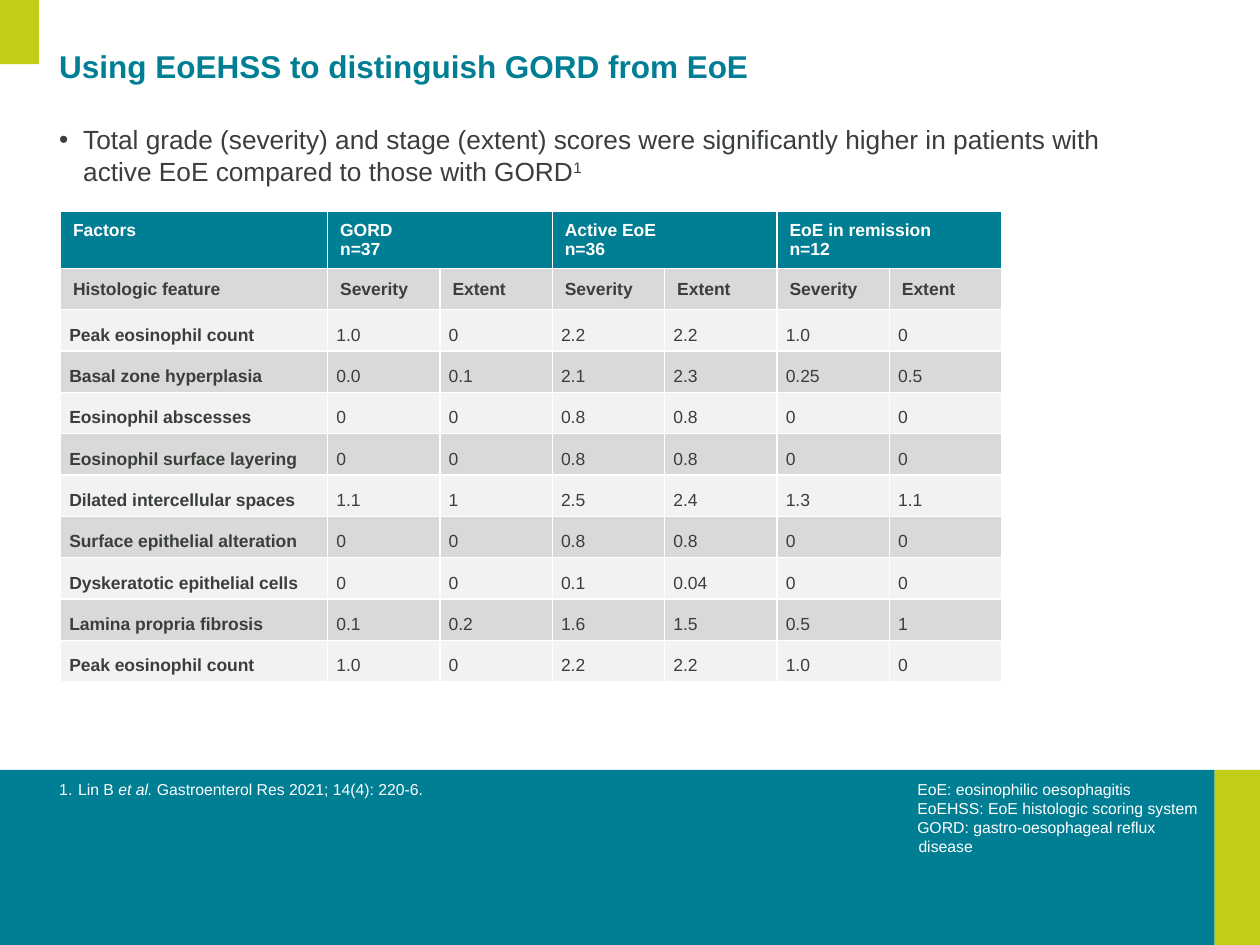
from dataclasses import dataclass

from lxml import etree
from pptx import Presentation
from pptx import util as u
from pptx.dml.color import RGBColor
from pptx.enum import shapes, text
from pptx.oxml.ns import qn

WIDTH, HEIGHT = u.Inches(10), u.Inches(7.5)
COLS, ROWS = 100, 75


@dataclass(frozen=True)
class Theme:
    font: str = "Arial"
    teal: str = "007E93"
    lime: str = "C0CF15"
    ink: str = "3A3F3A"
    white: str = "FFFFFF"
    band: str = "D9D9D9"
    pale: str = "F2F2F2"
    title: float = 18
    body: float = 15
    table: float = 10
    note: float = 9


@dataclass(frozen=True)
class Box:
    """Position and size in columns and rows of the slide grid."""
    col: float
    row: float
    cols: float
    rows: float

    def emu(self) -> tuple[int, int, int, int]:
        return across(self.col), down(self.row), across(self.cols), down(self.rows)


@dataclass(frozen=True)
class Bar:
    box: Box
    color: str


@dataclass(frozen=True)
class CellStyle:
    fill: str
    color: str
    bold: bool = True
    margin_x: float = 1
    margin_y: float = 0.7
    anchor: text.MSO_ANCHOR = text.MSO_ANCHOR.MIDDLE
    spacing: float = 1.0


T = Theme()
BAND_TOP, BAND_ROWS = 61.1, 13.9
BARS = [
    Bar(Box(0, BAND_TOP, 96.4, BAND_ROWS), T.teal),
    Bar(Box(96.4, BAND_TOP, 3.6, BAND_ROWS), T.lime),
    Bar(Box(0, 0, 3.1, 5.1), T.lime),
]
TITLE_BOX = Box(4.7, 1.8, 74.8, 6.8)
BODY_BOX = Box(4.7, 9.8, 86.3, 6.9)
REFERENCE_BOX = Box(4.7, BAND_TOP, 65.1, BAND_ROWS)
ABBREVIATION_BOX = Box(72.8, BAND_TOP, 23.5, BAND_ROWS)

TABLE_LEFT, TABLE_TOP = 4.8, 16.8
FACTOR_COLS, SCORE_COLS = 21.2, 8.92
HEADER_ROWS, SCORE_ROWS = 4.5, 3.28

GROUPS = ["GORD\nn=37", "Active EoE\nn=36", "EoE in remission\nn=12"]
PEAK = ("Peak eosinophil count", "1.0", "0", "2.2", "2.2", "1.0", "0")
SCORES = [
    PEAK,
    ("Basal zone hyperplasia", "0.0", "0.1", "2.1", "2.3", "0.25", "0.5"),
    ("Eosinophil abscesses", "0", "0", "0.8", "0.8", "0", "0"),
    ("Eosinophil surface layering", "0", "0", "0.8", "0.8", "0", "0"),
    ("Dilated intercellular spaces", "1.1", "1", "2.5", "2.4", "1.3", "1.1"),
    ("Surface epithelial alteration", "0", "0", "0.8", "0.8", "0", "0"),
    ("Dyskeratotic epithelial cells", "0", "0", "0.1", "0.04", "0", "0"),
    ("Lamina propria fibrosis", "0.1", "0.2", "1.6", "1.5", "0.5", "1"),
    PEAK,
]
ABBREVIATIONS = [
    "EoE: eosinophilic oesophagitis",
    "EoEHSS: EoE histologic scoring system",
    "GORD: gastro-oesophageal reflux disease",
]


def across(cols: float) -> int:
    return round(WIDTH * cols / COLS)


def down(rows: float) -> int:
    return round(HEIGHT * rows / ROWS)


def apply(obj, **values) -> None:
    for name, value in values.items():
        setattr(obj, name, value)


def style_font(font, size: float, color: str, **extra) -> None:
    apply(font, name=T.font, size=u.Pt(size), **extra)
    font.color.rgb = RGBColor.from_string(color)


def place(sp, box: Box, top: float = 0, right: float = 0,
          anchor=text.MSO_ANCHOR.TOP):
    """Set position, margins and anchor, and return the text frame."""
    apply(sp, **dict(zip(("left", "top", "width", "height"), box.emu())))
    tf = sp.text_frame
    apply(tf, word_wrap=True, auto_size=text.MSO_AUTO_SIZE.NONE,
          vertical_anchor=anchor, margin_left=0, margin_bottom=0,
          margin_top=down(top), margin_right=across(right))
    return tf


def hang(p, cols: float, tag: str | None = None, **bullet: str) -> None:
    """Give a paragraph a hanging indent and, if named, a bullet."""
    ppr = p._p.get_or_add_pPr()
    ppr.set("marL", str(across(cols)))
    ppr.set("indent", str(-across(cols)))
    if tag:
        etree.SubElement(ppr, qn(tag), bullet)
    apply(p, space_before=u.Pt(0), line_spacing=1.0)


def add_runs(p, runs: list[tuple[str, dict]], size: float, color: str) -> None:
    for words, extra in runs:
        r = p.add_run()
        r.text = words
        style_font(r.font, size, color, **extra)


def draw_bar(s, bar: Bar) -> None:
    sp = s.shapes.add_shape(shapes.MSO_SHAPE.RECTANGLE, *bar.box.emu())
    sp.shadow.inherit = False
    sp.fill.solid()
    sp.fill.fore_color.rgb = RGBColor.from_string(bar.color)
    sp.line.fill.background()
    s.shapes.title._element.addprevious(sp._element)  # behind the text


def fill_cell(cell, words: str, style: CellStyle) -> None:
    x, y = across(style.margin_x), down(style.margin_y)
    apply(cell, text=words, vertical_anchor=style.anchor, margin_left=x,
          margin_right=x, margin_top=y, margin_bottom=y)
    for p in cell.text_frame.paragraphs:
        p.line_spacing = style.spacing
        for r in p.runs:
            style_font(r.font, T.table, style.color, bold=style.bold)
    cell.fill.solid()
    cell.fill.fore_color.rgb = RGBColor.from_string(style.fill)
    tcpr = cell._tc.get_or_add_tcPr()
    for i, side in enumerate(("lnL", "lnR", "lnT", "lnB")):
        ln = etree.Element(qn(f"a:{side}"), w=str(u.Pt(1)))
        fill = etree.SubElement(ln, qn("a:solidFill"))
        etree.SubElement(fill, qn("a:srgbClr"), val=T.white)
        tcpr.insert(i, ln)


def draw_table(s) -> None:
    groups = [words for group in GROUPS for words in (group, "")]
    rows = [("Factors", *groups),
            ("Histologic feature", *("Severity", "Extent") * len(GROUPS)), *SCORES]
    widths = [FACTOR_COLS] + [SCORE_COLS] * len(groups)
    heights = [HEADER_ROWS] + [SCORE_ROWS] * (len(rows) - 1)
    box = Box(TABLE_LEFT, TABLE_TOP, sum(widths), sum(heights))
    table = s.shapes.add_table(len(rows), len(widths), *box.emu()).table
    for column, width in zip(table.columns, widths):
        column.width = across(width)
    for row, height in zip(table.rows, heights):
        row.height = down(height)

    for i, row in enumerate(rows):
        for j, words in enumerate(row):
            if i == 0:
                style = CellStyle(T.teal, T.white, anchor=text.MSO_ANCHOR.TOP)
            elif i == 1:
                style = CellStyle(T.band, T.ink)
            else:
                style = CellStyle(T.band if i % 2 else T.pale, T.ink, j == 0,
                                  0.7, 0, spacing=1.5)
            fill_cell(table.cell(i, j), words, style)
    for j in range(1, len(widths), 2):
        table.cell(0, j).merge(table.cell(0, j + 1))


def main() -> None:
    prs = Presentation()
    apply(prs, slide_width=WIDTH, slide_height=HEIGHT)
    s = prs.slides.add_slide(prs.slide_layouts.get_by_name("Two Content"))
    title, body, reference = list(s.placeholders)[:3]
    for bar in BARS:
        draw_bar(s, bar)

    p = place(title, TITLE_BOX, anchor=text.MSO_ANCHOR.MIDDLE).paragraphs[0]
    apply(p, alignment=text.PP_ALIGN.LEFT, line_spacing=1.0)
    add_runs(p, [("Using EoEHSS to distinguish GORD from EoE", {"bold": True})],
             T.title, T.teal)

    p = place(body, BODY_BOX).paragraphs[0]
    hang(p, 1.9, "a:buChar", char="•")
    add_runs(p, [("Total grade (severity) and stage (extent) scores were "
                  "significantly higher in patients with active EoE compared "
                  "to those with GORD", {}), ("1", {})], T.body, T.ink)
    p.runs[-1].font._element.set("baseline", "30000")

    p = place(reference, REFERENCE_BOX, 0.8, 1.2).paragraphs[0]
    hang(p, 1.5, "a:buAutoNum", type="arabicPeriod")
    add_runs(p, [("Lin B ", {}), ("et al. ", {"italic": True}),
                 ("Gastroenterol Res 2021; 14(4): 220-6.", {})], T.note, T.white)

    draw_table(s)

    tf = place(s.shapes.add_textbox(*ABBREVIATION_BOX.emu()), ABBREVIATION_BOX, 0.8, 1.2)
    for i, words in enumerate(ABBREVIATIONS):
        p = tf.add_paragraph() if i else tf.paragraphs[0]
        hang(p, 0.1)
        add_runs(p, [(words, {})], T.note, T.white)

    prs.save("out.pptx")


if __name__ == "__main__":
    main()
